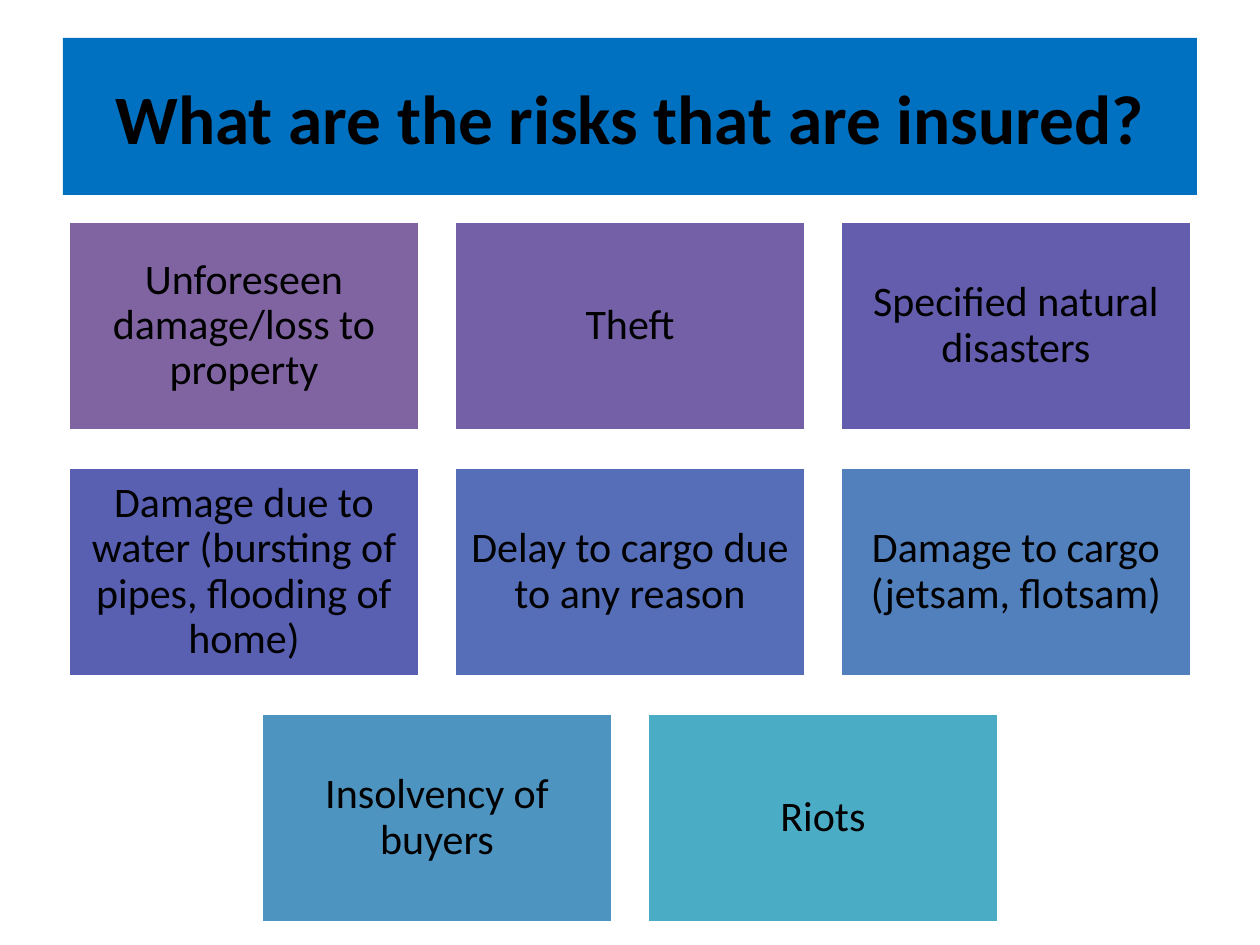
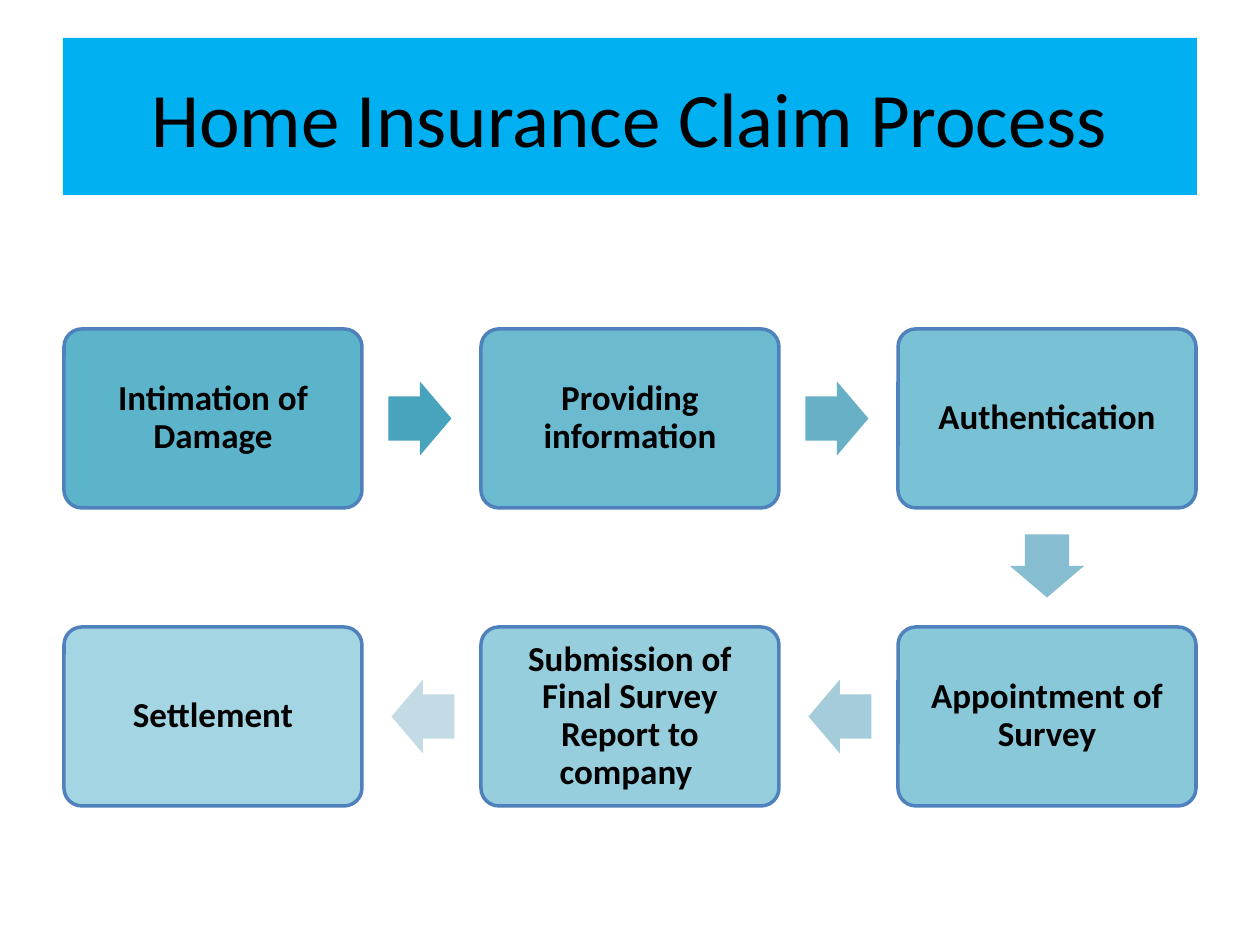
from lxml import etree
from pptx import Presentation
from pptx.dml.color import RGBColor as RGB
from pptx.enum.shapes import MSO_SHAPE as SHAPE
from pptx.enum.text import MSO_ANCHOR as ANCHOR, PP_ALIGN as ALIGN
from pptx.oxml.ns import qn
from pptx.util import Emu, Pt

# Shared settings: lengths are px, 126 to the inch
SCALE = 914400 / 126
SLIDE_W, SLIDE_H = 1260, 945
FONT = "Calibri"
COLORS = {
    "text": "000000",
    "white": "FFFFFF",
    "risk_band": "0070C0",
    "claim_band": "00B0F0",
    "step": "4BACC6",
    "step_line": "4F81BD",
}

# Slide 1: tile text and fill, row by row
RISK_ROWS = [
    [("Unforeseen damage/loss to property", "8064A2"),
     ("Theft", "7460A7"),
     ("Specified natural disasters", "645DAD")],
    [("Damage due to water (bursting of pipes, flooding of home)", "5960B2"),
     ("Delay to cargo due to any reason", "556EB7"),
     ("Damage to cargo (jetsam, flotsam)", "5280BC")],
    [("Insolvency of buyers", "4E94C1"),
     ("Riots", "4BACC6")],
]

# Slide 2: step text with its column and row, in order of the process
CLAIM_STEPS = [
    ("Intimation of Damage", 0, 0),
    ("Providing information", 1, 0),
    ("Authentication", 2, 0),
    ("Appointment of Survey", 2, 1),
    ("Submission of Final Survey Report to company ", 1, 1),
    ("Settlement", 0, 1),
]
ARROW_FILLS = ["48A4BD", "67B0C6", "86BDD0", "A4CCDA", "C2DBE5"]


def px(n):
    return Emu(round(n * SCALE))


def add_block(s, kind, x, y, w, h, fill, line=None, alpha=None):
    """Preset shape with a flat fill and an optional 2 pt outline."""
    sp = s.shapes.add_shape(kind, px(x), px(y), px(w), px(h))
    sp.shadow.inherit = False
    sp.fill.solid()
    sp.fill.fore_color.rgb = RGB.from_string(fill)
    if alpha is not None:
        clr = sp._element.spPr.find(qn("a:solidFill"))[0]
        etree.SubElement(clr, qn("a:alpha")).set("val", str(alpha * 1000))
    if line:
        sp.line.color.rgb = RGB.from_string(line)
        sp.line.width = Pt(2)
    else:
        sp.line.fill.background()
    return sp


def add_text(sp, text, size, bold=False, inset=13, spacing=None):
    """Centred text inside a shape."""
    tf = sp.text_frame
    tf.word_wrap = True
    tf.vertical_anchor = ANCHOR.MIDDLE
    tf.margin_left = tf.margin_right = px(inset)
    tf.margin_top = tf.margin_bottom = px(inset)
    p = tf.paragraphs[0]
    p.alignment = ALIGN.CENTER
    if spacing:
        p.line_spacing = spacing
    r = p.add_run()
    r.text = text
    r.font.name = FONT
    r.font.size = Pt(size)
    r.font.bold = bold
    r.font.color.rgb = RGB.from_string(COLORS["text"])


def add_title_slide(prs, title, band, size, bold=False):
    """Blank slide with the coloured title band."""
    s = prs.slides.add_slide(prs.slide_layouts[6])
    sp = add_block(s, SHAPE.RECTANGLE, 63, 38, 1134, 157, COLORS[band])
    add_text(sp, title, size, bold, inset=6)
    return s


def add_risk_tiles(s):
    """Rows of tiles, each row centred on the slide."""
    w, h, gap_x, gap_y, top = 351, 210, 35, 36, 221
    for row, tiles in enumerate(RISK_ROWS):
        row_w = len(tiles) * (w + gap_x) - gap_x
        left = (SLIDE_W - row_w) / 2
        for col, (text, fill) in enumerate(tiles):
            sp = add_block(s, SHAPE.RECTANGLE, left + col * (w + gap_x),
                           top + row * (h + gap_y), w, h, fill, COLORS["white"])
            add_text(sp, text, 24, spacing=0.9)


def add_arrow(s, cx, cy, dx, dy, fill):
    """Block arrow centred on a point, turned towards (dx, dy)."""
    w, h = 63, 74
    sp = add_block(s, SHAPE.RIGHT_ARROW, cx - w / 2, cy - h / 2, w, h, fill)
    sp.adjustments[0], sp.adjustments[1] = 0.6, 0.5
    sp.rotation = {(1, 0): 0, (0, 1): 90, (-1, 0): 180}[dx, dy]


def add_claim_steps(s):
    """Steps that run right, down and back left, fading as they go."""
    w, h, step_x, step_y, top = 298, 179, 417, 298, 329
    left = (SLIDE_W - 2 * step_x - w) / 2
    arrow_reach = 58  # from the edge of a step to the centre of its arrow

    for i, (text, col, row) in enumerate(CLAIM_STEPS):
        x, y = left + col * step_x, top + row * step_y
        sp = add_block(s, SHAPE.ROUNDED_RECTANGLE, x, y, w, h, COLORS["step"],
                       COLORS["step_line"], alpha=90 - 8 * i)
        sp.adjustments[0] = 0.1
        add_text(sp, text, 20, bold=True, inset=10, spacing=0.9)
        if i < len(ARROW_FILLS):
            _, next_col, next_row = CLAIM_STEPS[i + 1]
            dx, dy = next_col - col, next_row - row
            add_arrow(s, x + w / 2 + dx * (w / 2 + arrow_reach),
                      y + h / 2 + dy * (h / 2 + arrow_reach),
                      dx, dy, ARROW_FILLS[i])


def main():
    prs = Presentation()
    prs.slide_width, prs.slide_height = px(SLIDE_W), px(SLIDE_H)

    # Insured risks
    s = add_title_slide(prs, "What are the risks that are insured?",
                        "risk_band", 39.6, bold=True)
    add_risk_tiles(s)

    # Claim process
    s = add_title_slide(prs, "Home Insurance Claim Process", "claim_band", 44)
    add_claim_steps(s)

    prs.save("out.pptx")


if __name__ == "__main__":
    main()
